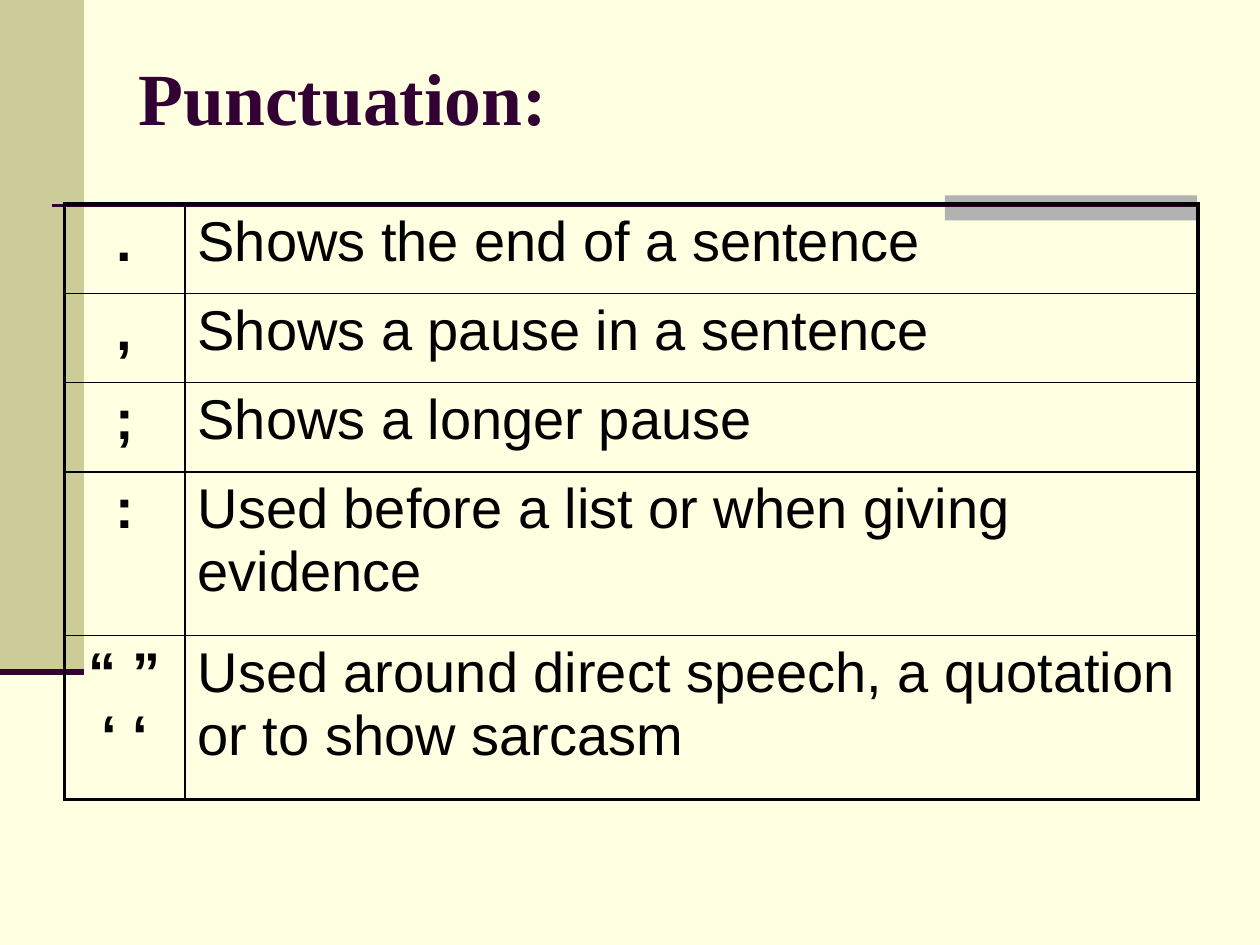
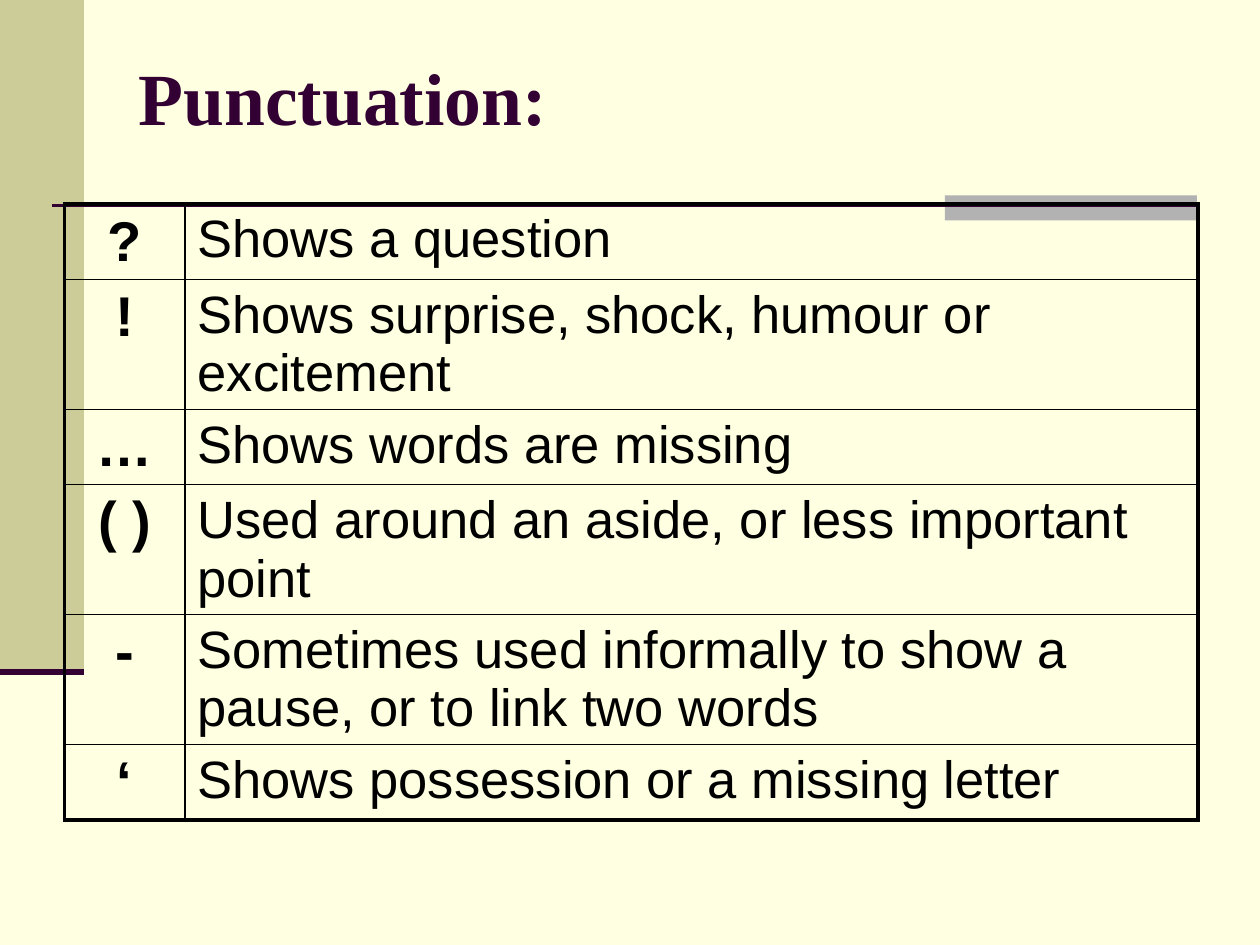
from dataclasses import dataclass

from lxml import etree
from pptx import Presentation
from pptx.dml.color import RGBColor
from pptx.enum.shapes import MSO_CONNECTOR, MSO_SHAPE
from pptx.enum.text import MSO_ANCHOR, MSO_AUTO_SIZE, PP_ALIGN
from pptx.oxml.ns import qn
from pptx.slide import Slide
from pptx.table import _Cell
from pptx.util import Pt

RECTANGLE = MSO_SHAPE.RECTANGLE
STRAIGHT = MSO_CONNECTOR.STRAIGHT
LEFT, CENTER = PP_ALIGN.LEFT, PP_ALIGN.CENTER
MIDDLE = MSO_ANCHOR.MIDDLE
NO_AUTOFIT = MSO_AUTO_SIZE.NONE

CREAM = RGBColor(0xFF, 0xFF, 0xE1)
OLIVE = RGBColor(0xCC, 0xCC, 0x99)
GRAY = RGBColor(0xB2, 0xB2, 0xB2)
PLUM = RGBColor(0x33, 0x00, 0x33)
BLACK = RGBColor(0x00, 0x00, 0x00)

TITLE_FONT = "Times New Roman"
BODY_FONT = "Arial"
TITLE_SIZE = 42
MARK_SIZE = 32
TITLE_ONLY_LAYOUT = 5
TABLE_LEFT, TABLE_TOP = 36.7, 116.6
COLUMN_WIDTHS = (69, 579)
OUTER_BORDER, INNER_BORDER = 2.25, 1


@dataclass(frozen=True)
class Band:
    left: float
    top: float
    width: float
    height: float
    color: RGBColor


@dataclass(frozen=True)
class Rule:
    left: float
    right: float
    top: float
    weight: float


@dataclass(frozen=True)
class MarkRow:
    mark: str
    meaning: str
    height: float


@dataclass(frozen=True)
class PunctuationSlide:
    title: str
    meaning_size: float
    rows: tuple[MarkRow, ...]


BANDS = (
    Band(0, 0, 48, 384, OLIVE),
    Band(540, 111.6, 144, 14.4, GRAY),
)
RULES = (
    Rule(30, 684, 117.5, 1.5),
    Rule(0, 48, 384, 3.5),
)
SLIDES = (
    PunctuationSlide("Punctuation:", 32, (
        MarkRow(".", "Shows the end of a sentence", 51),
        MarkRow(",", "Shows a pause in a sentence", 51),
        MarkRow(";", "Shows a longer pause", 51),
        MarkRow(":", "Used before a list or when giving evidence", 93.6),
        MarkRow("“ ” ‘ ‘", "Used around direct speech, a quotation or to show sarcasm", 93.6),
    )),
    PunctuationSlide("Punctuation:", 30, (
        MarkRow("?", "Shows a question", 43),
        MarkRow("!", "Shows surprise, shock, humour or excitement", 74),
        MarkRow("…", "Shows words are missing", 43),
        MarkRow("( )", "Used around an aside, or less important point", 74),
        MarkRow("-", "Sometimes used informally to show a pause, or to link two words", 74),
        MarkRow("‘", "Shows possession or a missing letter", 43),
    )),
)


def draw_band(slide: Slide, band: Band) -> None:
    shape = slide.shapes.add_shape(
        RECTANGLE, Pt(band.left), Pt(band.top), Pt(band.width), Pt(band.height))
    shape.shadow.inherit = False
    shape.fill.solid()
    shape.fill.fore_color.rgb = band.color
    shape.line.fill.background()


def draw_rule(slide: Slide, rule: Rule) -> None:
    connector = slide.shapes.add_connector(
        STRAIGHT, Pt(rule.left), Pt(rule.top), Pt(rule.right), Pt(rule.top))
    connector.line.color.rgb = PLUM
    connector.line.width = Pt(rule.weight)
    etree.SubElement(connector._element.spPr, qn("a:effectLst"))


def format_title(slide: Slide, text: str) -> None:
    title = slide.shapes.title
    title.left, title.top, title.width, title.height = Pt(72), Pt(21.6), Pt(612), Pt(67)
    text_frame = title.text_frame
    text_frame.text = text
    text_frame.auto_size = NO_AUTOFIT
    text_frame.vertical_anchor = MIDDLE
    paragraph = text_frame.paragraphs[0]
    paragraph.alignment = LEFT
    font = paragraph.runs[0].font
    font.name, font.size, font.bold = TITLE_FONT, Pt(TITLE_SIZE), True
    font.color.rgb = PLUM


def set_borders(cell: _Cell, widths: dict[str, float]) -> None:
    properties = cell._tc.get_or_add_tcPr()
    for tag, width in widths.items():
        border = etree.SubElement(properties, qn(f"a:{tag}"), w=str(Pt(width)))
        fill = etree.SubElement(border, qn("a:solidFill"))
        etree.SubElement(fill, qn("a:srgbClr"), val=str(BLACK))


def fill_cell(cell: _Cell, text: str, size: float, is_mark: bool) -> None:
    cell.fill.background()
    cell.text_frame.text = text
    paragraph = cell.text_frame.paragraphs[0]
    paragraph.alignment = CENTER if is_mark else LEFT
    font = paragraph.runs[0].font
    font.name, font.size, font.bold = BODY_FONT, Pt(size), is_mark
    font.color.rgb = BLACK


def draw_table(slide: Slide, content: PunctuationSlide) -> None:
    rows = content.rows
    table = slide.shapes.add_table(
        len(rows), len(COLUMN_WIDTHS), Pt(TABLE_LEFT), Pt(TABLE_TOP),
        Pt(sum(COLUMN_WIDTHS)), Pt(sum(row.height for row in rows))).table
    table.first_row = False
    table.horz_banding = False
    for column, width in zip(table.columns, COLUMN_WIDTHS):
        column.width = Pt(width)
    for row_index, row in enumerate(rows):
        table.rows[row_index].height = Pt(row.height)
        for column_index, text in enumerate((row.mark, row.meaning)):
            cell = table.cell(row_index, column_index)
            is_mark = column_index == 0
            outer_sides = {
                "lnL": is_mark,
                "lnR": not is_mark,
                "lnT": row_index == 0,
                "lnB": row_index == len(rows) - 1,
            }
            set_borders(cell, {
                tag: OUTER_BORDER if outer else INNER_BORDER
                for tag, outer in outer_sides.items()})
            fill_cell(cell, text, MARK_SIZE if is_mark else content.meaning_size, is_mark)


def main() -> None:
    presentation = Presentation()
    presentation.slide_width, presentation.slide_height = Pt(720), Pt(540)
    background = presentation.slide_master.background.fill
    background.solid()
    background.fore_color.rgb = CREAM
    for content in SLIDES:
        slide = presentation.slides.add_slide(presentation.slide_layouts[TITLE_ONLY_LAYOUT])
        for band in BANDS:
            draw_band(slide, band)
        for rule in RULES:
            draw_rule(slide, rule)
        format_title(slide, content.title)
        draw_table(slide, content)
    presentation.save("out.pptx")


if __name__ == "__main__":
    main()
